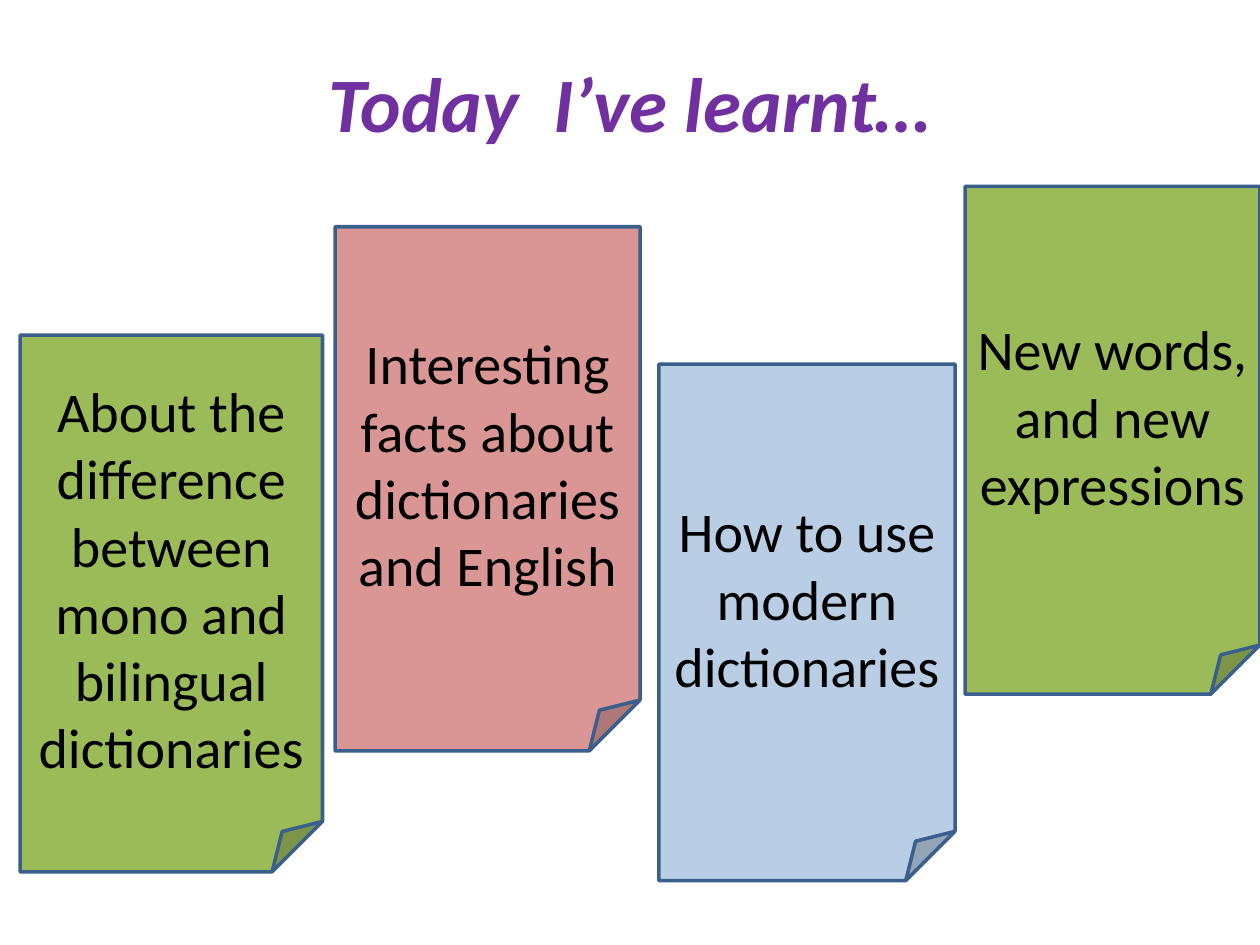
import pptx
import pptx.util
import pptx.dml.color
import pptx.enum.shapes
import pptx.enum.text

Inches = pptx.util.Inches
Pt = pptx.util.Pt
RGB = pptx.dml.color.RGBColor.from_string

THEME = {
    "font": "Calibri",
    "heading": "7030A0",
    "ink": "000000",
    "outline": "3A5F8C",
    "green": "9BBB59",
    "blue": "B9CDE5",
    "pink": "D99694",
    "heading_size": 44,
    "note_size": 32,
    "outline_width": 2,
}

HEADING = ("Today  I’ve learnt…", (0.5, 0.3, 9, 1.01))
NOTES = [
    ("About the difference between mono and bilingual dictionaries", "green", (0.16, 2.66, 2.4, 4.26)),
    ("How to use modern dictionaries", "blue", (5.23, 2.89, 2.35, 4.1)),
    ("Interesting facts about dictionaries and English", "pink", (2.66, 1.8, 2.42, 4.16)),
    ("New words, and new expressions", "green", (7.66, 1.48, 2.34, 4.03)),
]


def write(frame, wording, size, color, emphasis=False):
    frame.word_wrap = True
    frame.vertical_anchor = pptx.enum.text.MSO_ANCHOR.MIDDLE
    paragraph = frame.paragraphs[0]
    paragraph.alignment = pptx.enum.text.PP_ALIGN.CENTER
    run = paragraph.add_run()
    run.text = wording
    run.font.name = THEME["font"]
    run.font.size = Pt(size)
    run.font.bold = emphasis
    run.font.italic = emphasis
    run.font.color.rgb = RGB(color)


def add_note(slide, wording, color, place):
    note = slide.shapes.add_shape(
        pptx.enum.shapes.MSO_SHAPE.FOLDED_CORNER, *map(Inches, place))
    note.shadow.inherit = False
    note.fill.solid()
    note.fill.fore_color.rgb = RGB(THEME[color])
    note.line.color.rgb = RGB(THEME["outline"])
    note.line.width = Pt(THEME["outline_width"])
    write(note.text_frame, wording, THEME["note_size"], THEME["ink"])


def main():
    deck = pptx.Presentation()
    deck.slide_width, deck.slide_height = Inches(10), Inches(7.5)
    slide = deck.slides.add_slide(deck.slide_layouts[5])

    wording, place = HEADING
    heading = slide.shapes.title
    heading.left, heading.top, heading.width, heading.height = map(Inches, place)
    write(heading.text_frame, wording, THEME["heading_size"], THEME["heading"], emphasis=True)

    for note in NOTES:
        add_note(slide, *note)

    deck.save("out.pptx")


if __name__ == "__main__":
    main()
